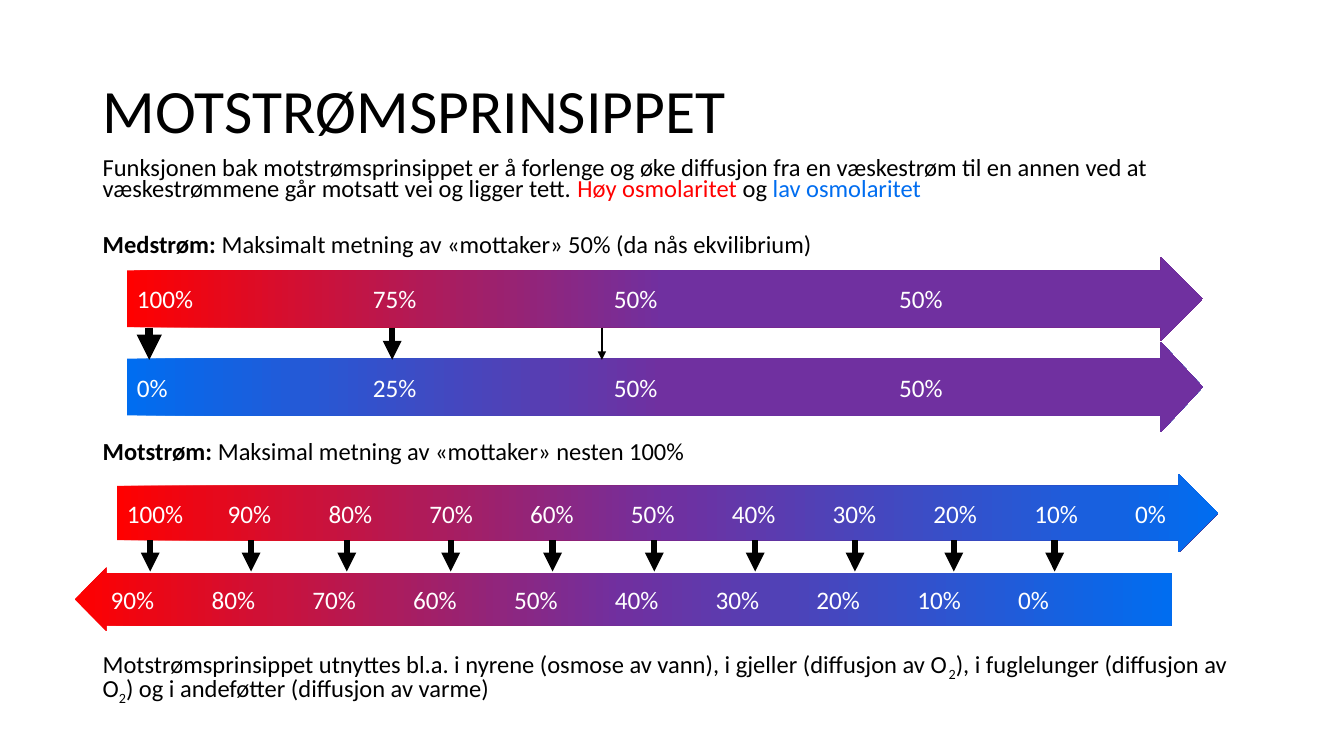
from copy import deepcopy

from lxml import etree
from pptx import Presentation
from pptx.dml.color import RGBColor
from pptx.enum.shapes import MSO_CONNECTOR, MSO_SHAPE
from pptx.enum.text import MSO_ANCHOR, PP_ALIGN
from pptx.oxml.ns import qn
from pptx.util import Inches, Pt

RIGHT = MSO_SHAPE.RIGHT_ARROW
LEFT = MSO_SHAPE.LEFT_ARROW
STRAIGHT = MSO_CONNECTOR.STRAIGHT
MIDDLE = MSO_ANCHOR.MIDDLE
ALIGN_LEFT = PP_ALIGN.LEFT

BLACK = RGBColor(0x00, 0x00, 0x00)
WHITE = RGBColor(0xFF, 0xFF, 0xFF)
RED = RGBColor(0xFF, 0x00, 0x00)
PURPLE = RGBColor(0x70, 0x30, 0xA0)
BLUE = RGBColor(0x00, 0x6D, 0xF0)


def add_span(para, text, size, color):
    span = para.add_run()
    span.text = text
    span.font.name = "Calibri"
    span.font.size = Pt(size)
    span.font.color.rgb = color
    return span


def add_text(top, height, size, line_spacing, spans):
    box = page.shapes.add_textbox(Inches(0.92), Inches(top), Inches(11.5), Inches(height))
    box.text_frame.word_wrap = True
    para = box.text_frame.paragraphs[0]
    para.line_spacing = line_spacing
    for text, color, style in spans:
        span = add_span(para, text, size, color)
        if style == "bold":
            span.font.bold = True
        elif style == "sub":
            span.font._element.set("baseline", "-25000")
    return box


deck = Presentation()
deck.slide_width = Inches(13.33)
deck.slide_height = Inches(7.5)
page = deck.slides.add_slide(deck.slide_layouts[6])

title = add_text(0.4, 1.45, 44, 0.9, [("MOTSTRØMSPRINSIPPET", BLACK, "")])
title.text_frame.vertical_anchor = MIDDLE

add_text(1.54, 0.55, 17.5, 0.7, [
    ("Funksjonen bak motstrømsprinsippet er å forlenge og øke diffusjon fra en væskestrøm "
     "til en annen ved at væskestrømmene går motsatt vei og ligger tett. ", BLACK, ""),
    ("Høy osmolaritet ", RED, ""),
    ("og ", BLACK, ""),
    ("lav osmolaritet", BLUE, ""),
])
add_text(2.3, 0.3, 17.5, 0.7, [
    ("Medstrøm: ", BLACK, "bold"),
    ("Maksimalt metning av «mottaker» 50% (da nås ekvilibrium)", BLACK, ""),
])
add_text(4.36, 0.3, 17.5, 0.7, [
    ("Motstrøm: ", BLACK, "bold"),
    ("Maksimal metning av «mottaker» nesten 100%", BLACK, ""),
])
add_text(6.45, 0.6, 17.5, 0.7, [
    ("Motstrømsprinsippet utnyttes bl.a. i nyrene (osmose av vann), "
     "i gjeller (diffusjon av O", BLACK, ""),
    ("2", BLACK, "sub"),
    ("), i fuglelunger (diffusjon av O", BLACK, ""),
    ("2", BLACK, "sub"),
    (") og i andeføtter (diffusjon av varme)", BLACK, ""),
])

parallel_tabs = [2.34, 4.73, 7.56]
counter_tabs = range(1, 11)
falling = [f"{value}%" for value in range(100, -1, -10)]
flows = [
    (RIGHT, 1.26, 2.55, 10.67, 0.83, (0.68, 0.5), (RED, PURPLE, PURPLE),
     ["100%", "75%", "50%", "50%"], parallel_tabs),
    (RIGHT, 1.26, 3.39, 10.67, 0.9, (0.625, 0.465), (BLUE, PURPLE, PURPLE),
     ["0%", "25%", "50%", "50%"], parallel_tabs),
    (LEFT, 0.74, 5.63, 10.88, 0.63, (0.824, 0.5), (RED, PURPLE, BLUE),
     falling[1:], counter_tabs),
    (RIGHT, 1.16, 4.7, 10.92, 0.78, (0.692, 0.5), (RED, PURPLE, BLUE),
     falling, counter_tabs),
]
for kind, left, top, width, height, adjustments, colors, labels, tabs in flows:
    flow = page.shapes.add_shape(kind, Inches(left), Inches(top), Inches(width), Inches(height))
    flow.shadow.inherit = False
    flow.line.fill.background()
    for index, adjustment in enumerate(adjustments):
        flow.adjustments[index] = adjustment
    flow.fill.gradient()
    flow.fill.gradient_angle = 0
    stop_list = flow._element.spPr.find(qn("a:gradFill")).find(qn("a:gsLst"))
    stop_list.insert(1, deepcopy(stop_list[0]))
    for stop, position, color in zip(flow.fill.gradient_stops, (0, 0.5, 1), colors):
        stop.position = position
        stop.color.rgb = color
    flow.text_frame.word_wrap = True
    flow.text_frame.vertical_anchor = MIDDLE
    para = flow.text_frame.paragraphs[0]
    para.alignment = ALIGN_LEFT
    tab_list = etree.SubElement(para._p.get_or_add_pPr(), qn("a:tabLst"))
    for tab in tabs:
        etree.SubElement(tab_list, qn("a:tab"), pos=str(Inches(tab)), algn="l")
    add_span(para, "\t".join(labels), 18, WHITE)

parallel_arrows = [(1.48, 3.25, 3.57, 6), (3.89, 3.25, 3.57, 4.5), (5.97, 3.25, 3.57, 1)]
counter_x = [1.49, 2.49, 3.44, 4.47, 5.48, 6.49, 7.49, 8.48, 9.46, 10.46]
counter_arrows = [(x, 5.36, 5.67, 4.5) for x in counter_x]
for x, start, end, weight in parallel_arrows + counter_arrows:
    arrow = page.shapes.add_connector(STRAIGHT, Inches(x), Inches(start), Inches(x), Inches(end))
    arrow.line.color.rgb = BLACK
    arrow.line.width = Pt(weight)
    etree.SubElement(arrow.line._get_or_add_ln(), qn("a:tailEnd"), type="triangle")
    etree.SubElement(arrow._element.spPr, qn("a:effectLst"))

deck.save("out.pptx")
